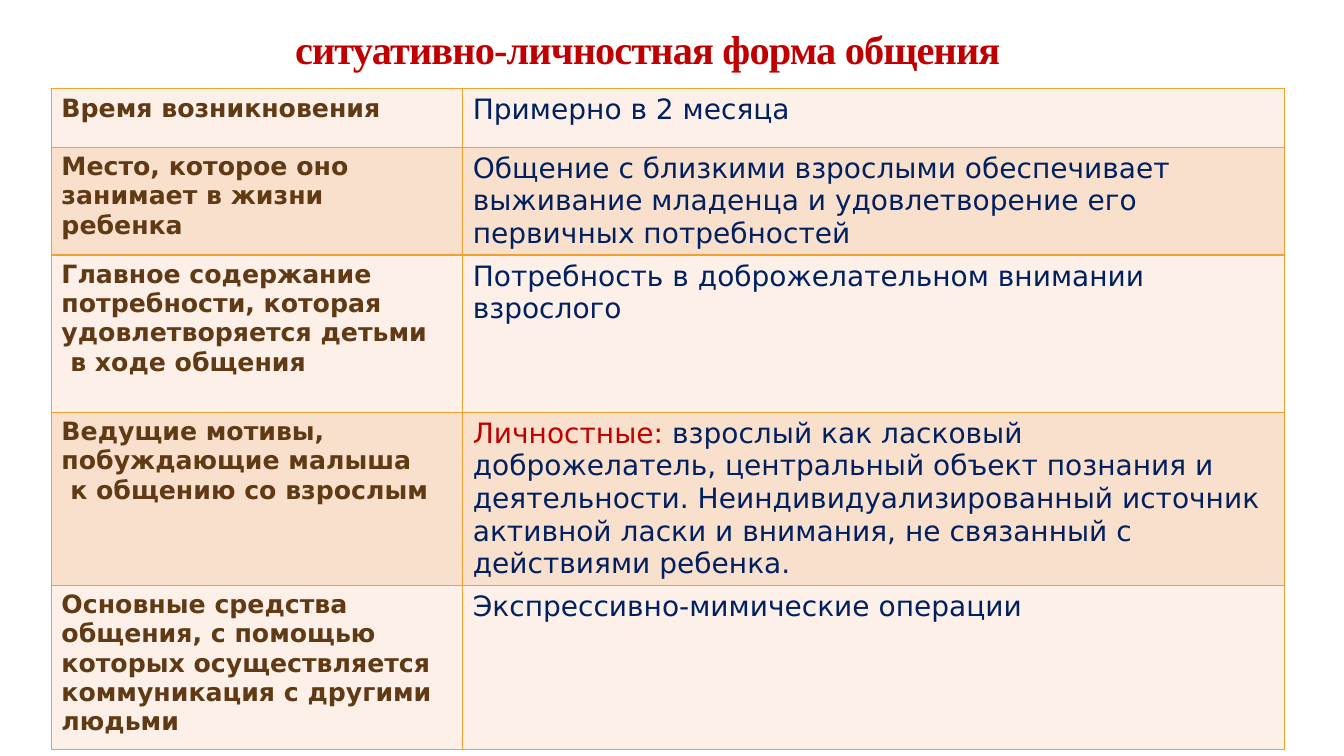
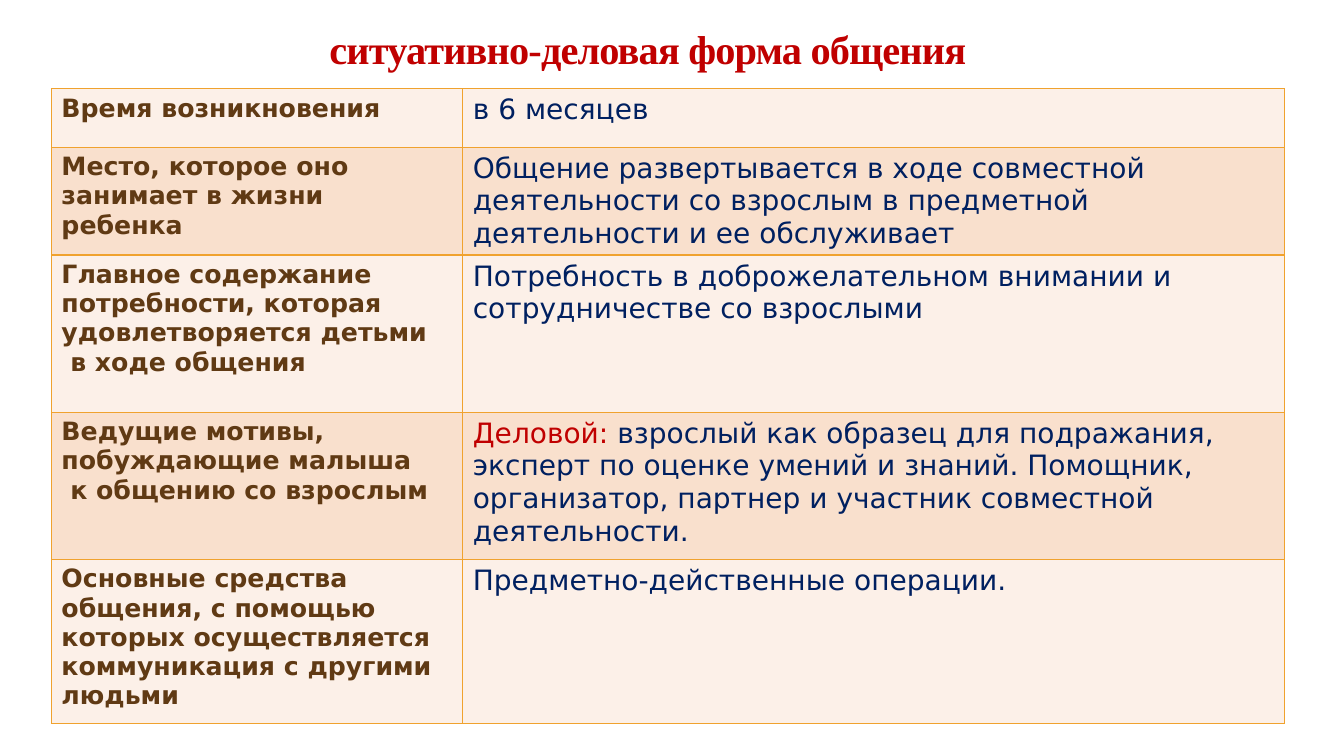
from dataclasses import dataclass

import lxml.etree
import pptx
import pptx.dml.color
import pptx.enum.text
import pptx.oxml.ns
import pptx.util

Inches = pptx.util.Inches
Pt = pptx.util.Pt


@dataclass(frozen=True)
class Theme:
    title_font: str = "Times New Roman"
    body_font: str = "DejaVu Sans"
    accent: str = "C00000"
    label: str = "603A14"
    answer: str = "002060"
    border: str = "F0A22E"
    bands: tuple = ("FCF0E8", "F9E0CD")
    title_size: float = 28.8
    label_size: float = 18
    answer_size: float = 20
    border_width: float = 1


COLUMN_WIDTHS = (4.08, 8.15)
ROW_HEIGHTS = (0.58, 1.02, 1.56, 1.46, 1.63)

# Each label is a tuple of paragraphs.
LABELS = (
    ("Время возникновения",),
    ("Место, которое оно занимает в жизни ребенка",),
    ("Главное содержание потребности, которая удовлетворяется детьми", " в ходе общения"),
    ("Ведущие мотивы, побуждающие малыша", " к общению со взрослым"),
    ("Основные средства общения, с помощью которых осуществляется "
     "коммуникация с другими людьми",),
)

# Each answer is a pair: highlighted lead-in, then plain text.
FORMS = (
    ("ситуативно-личностная форма общения", (
        ("", "Примерно в 2 месяца"),
        ("", "Общение с близкими взрослыми обеспечивает выживание младенца "
             "и удовлетворение его первичных потребностей"),
        ("", "Потребность в доброжелательном внимании взрослого"),
        ("Личностные: ", "взрослый как ласковый доброжелатель, центральный объект "
                         "познания и деятельности. Неиндивидуализированный источник "
                         "активной ласки и внимания, не связанный с действиями ребенка."),
        ("", "Экспрессивно-мимические операции"),
    )),
    ("ситуативно-деловая форма общения", (
        ("", "в 6 месяцев"),
        ("", "Общение развертывается в ходе совместной деятельности со взрослым "
             "в предметной деятельности и ее обслуживает"),
        ("", "Потребность в доброжелательном внимании и сотрудничестве со взрослыми"),
        ("Деловой: ", "взрослый как образец для подражания, эксперт по оценке умений "
                      "и знаний. Помощник, организатор, партнер и участник совместной "
                      "деятельности."),
        ("", "Предметно-действенные операции."),
    )),
)


class SlideBuilder:
    def __init__(self, deck, theme):
        self.deck = deck
        self.theme = theme
        self.page = None

    def new_page(self):
        self.page = self.deck.slides.add_slide(self.deck.slide_layouts[5])

    def span(self, para, text, font, size, color, bold=False):
        span = para.add_run()
        span.text = text
        span.font.name = font
        span.font.size = Pt(size)
        span.font.bold = bold
        span.font.color.rgb = pptx.dml.color.RGBColor.from_string(color)
        return span

    def title(self, text):
        box = self.page.shapes.title
        box.left, box.top = Inches(0.76), Inches(0.23)
        box.width, box.height = Inches(11.33), Inches(0.56)
        frame = box.text_frame
        frame.word_wrap = True
        frame.auto_size = pptx.enum.text.MSO_AUTO_SIZE.NONE
        frame.vertical_anchor = pptx.enum.text.MSO_ANCHOR.MIDDLE
        para = frame.paragraphs[0]
        para.alignment = pptx.enum.text.PP_ALIGN.CENTER
        para.line_spacing = 0.9
        theme = self.theme
        span = self.span(para, text, theme.title_font, theme.title_size, theme.accent, True)
        span.font._element.set("spc", "-60")

    def style_cell(self, cell, fill):
        properties = cell._tc.get_or_add_tcPr()
        qn = pptx.oxml.ns.qn
        for side in ("lnL", "lnR", "lnT", "lnB"):
            line = lxml.etree.SubElement(
                properties, qn(f"a:{side}"), w=str(Pt(self.theme.border_width)))
            solid = lxml.etree.SubElement(line, qn("a:solidFill"))
            lxml.etree.SubElement(solid, qn("a:srgbClr"), val=self.theme.border)
        cell.fill.solid()
        cell.fill.fore_color.rgb = pptx.dml.color.RGBColor.from_string(fill)

    def label(self, cell, lines):
        theme = self.theme
        frame = cell.text_frame
        for index, line in enumerate(lines):
            para = frame.add_paragraph() if index else frame.paragraphs[0]
            self.span(para, line, theme.body_font, theme.label_size, theme.label, True)

    def answer(self, cell, lead, text):
        theme = self.theme
        para = cell.text_frame.paragraphs[0]
        for part, color in ((lead, theme.accent), (text, theme.answer)):
            if part:
                self.span(para, part, theme.body_font, theme.answer_size, color)

    def table(self, answers):
        table = self.page.shapes.add_table(
            len(ROW_HEIGHTS), len(COLUMN_WIDTHS), Inches(0.51), Inches(0.88),
            Inches(sum(COLUMN_WIDTHS)), Inches(sum(ROW_HEIGHTS))).table
        table.first_row = table.horz_banding = False
        for column, width in zip(table.columns, COLUMN_WIDTHS):
            column.width = Inches(width)
        for index, (row, height) in enumerate(zip(table.rows, ROW_HEIGHTS)):
            row.height = Inches(height)
            for cell in row.cells:
                self.style_cell(cell, self.theme.bands[index % 2])
            self.label(row.cells[0], LABELS[index])
            self.answer(row.cells[1], *answers[index])


def main():
    deck = pptx.Presentation()
    deck.slide_width, deck.slide_height = Inches(13.33), Inches(7.5)
    builder = SlideBuilder(deck, Theme())
    for heading, answers in FORMS:
        builder.new_page()
        builder.title(heading)
        builder.table(answers)
    deck.save("out.pptx")


if __name__ == "__main__":
    main()
